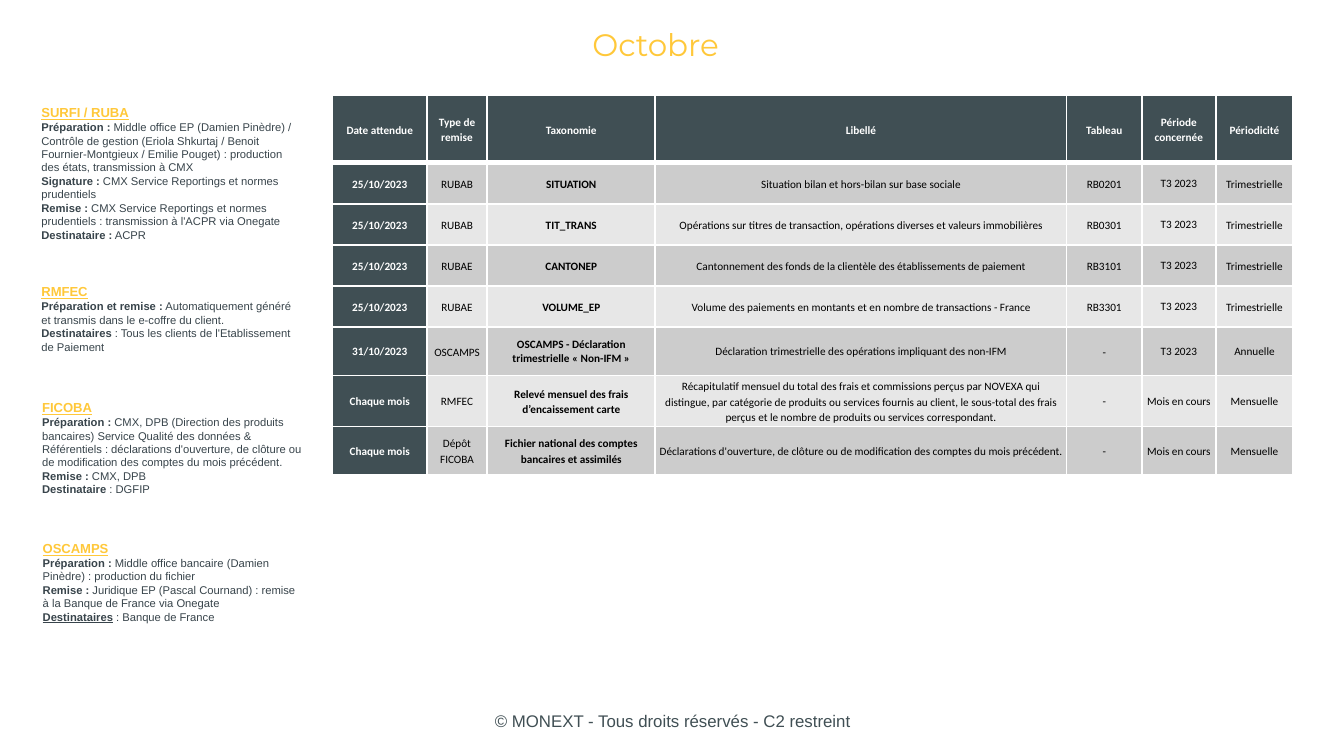
from lxml.etree import SubElement
from pptx import Presentation
from pptx.dml.color import RGBColor
from pptx.enum.text import MSO_ANCHOR, MSO_AUTO_SIZE, PP_ALIGN
from pptx.oxml.ns import qn
from pptx.util import Pt

YELLOW, SLATE, INK = "FFC83A", "404F54", "38444B"
WHITE, BLACK = "FFFFFF", "000000"
BANDS = ["CCCCCC", "E7E7E7"]

COLUMN_WIDTHS = [50.4, 32.4, 90, 220.4, 40.3, 39.6, 41.5]
ROW_HEIGHTS = [36] + [22] * 4 + [26] * 3
HEADER = ["Date attendue", "Type de remise", "Taxonomie", "Libellé",
          "Tableau", "Période concernée", "Périodicité"]
REPORTS = [
    ["25/10/2023", "RUBAB", "SITUATION",
     "Situation bilan et hors-bilan sur base sociale",
     "RB0201", "T3 2023", "Trimestrielle"],
    ["25/10/2023", "RUBAB", "TIT_TRANS",
     "Opérations sur titres de transaction, opérations diverses et valeurs immobilières",
     "RB0301", "T3 2023", "Trimestrielle"],
    ["25/10/2023", "RUBAE", "CANTONEP",
     "Cantonnement des fonds de la clientèle des établissements de paiement",
     "RB3101", "T3 2023", "Trimestrielle"],
    ["25/10/2023", "RUBAE", "VOLUME_EP",
     "Volume des paiements en montants et en nombre de transactions - France",
     "RB3301", "T3 2023", "Trimestrielle"],
    ["31/10/2023", "OSCAMPS", "OSCAMPS - Déclaration trimestrielle « Non-IFM »",
     "Déclaration trimestrielle des opérations impliquant des non-IFM",
     "-", "T3 2023", "Annuelle"],
    ["Chaque mois", "RMFEC", "Relevé mensuel des frais d’encaissement carte",
     "Récapitulatif mensuel du total des frais et commissions perçus par NOVEXA qui "
     "distingue, par catégorie de produits ou services fournis au client, le sous-total "
     "des frais perçus et le nombre de produits ou services correspondant.",
     "-", "Mois en cours", "Mensuelle"],
    ["Chaque mois", "Dépôt FICOBA", "Fichier national des comptes bancaires et assimilés",
     "Déclarations d'ouverture, de clôture ou de modification des comptes du mois précédent.",
     "-", "Mois en cours", "Mensuelle"],
]

PROCEDURES = [
    (15.1, 52.6, 80, "SURFI / RUBA", [
        ("Préparation :", " Middle office EP (Damien Pinèdre) / Contrôle de gestion "
         "(Eriola Shkurtaj / Benoit Fournier-Montgieux / Emilie Pouget) : production "
         "des états, transmission à CMX"),
        ("Signature :", " CMX Service Reportings et normes prudentiels"),
        ("Remise :", " CMX Service Reportings et normes prudentiels : "
         "transmission à l'ACPR via Onegate"),
        ("Destinataire :", " ACPR")]),
    (15.1, 148.5, 46, "RMFEC", [
        ("Préparation et remise :",
         " Automatiquement généré et transmis dans le e-coffre du client."),
        ("Destinataires", " : Tous les clients de l'Etablissement de Paiement")]),
    (15.5, 210.6, 60, "FICOBA", [
        ("Préparation :", " CMX, DPB (Direction des produits bancaires) Service Qualité "
         "des données & Référentiels : déclarations d'ouverture, de clôture ou de "
         "modification des comptes du mois précédent."),
        ("Remise :", " CMX, DPB"),
        ("Destinataire", " : DGFIP")]),
    (15.8, 286.1, 53, "OSCAMPS", [
        ("Préparation :", " Middle office bancaire (Damien Pinèdre) : production du fichier"),
        ("Remise :", " Juridique EP (Pascal Cournand) : remise à la Banque de France via Onegate"),
        ("Destinataires", " : Banque de France")]),
]


def color(hex_code):
    return RGBColor.from_string(hex_code)


def add_run(paragraph, text, size, font, hex_code, bold=False, underline=False):
    run = paragraph.add_run()
    run.text = text
    run.font.size = Pt(size)
    run.font.name = font
    run.font.bold = bold
    run.font.underline = underline
    run.font.color.rgb = color(hex_code)


def add_frame(slide, left, top, width, height):
    frame = slide.shapes.add_textbox(Pt(left), Pt(top), Pt(width), Pt(height)).text_frame
    frame.word_wrap = True
    return frame


def add_title(slide, text):
    title = slide.shapes.title
    title.left, title.top, title.width, title.height = Pt(151.2), Pt(10.8), Pt(400), Pt(26)
    frame = title.text_frame
    frame.auto_size = MSO_AUTO_SIZE.NONE
    frame.vertical_anchor = MSO_ANCHOR.MIDDLE
    heading = frame.paragraphs[0]
    heading.alignment = PP_ALIGN.CENTER
    add_run(heading, text, 16.6, "Montserrat", YELLOW)


def add_footer(slide, text):
    frame = add_frame(slide, 246.2, 375.1, 228.2, 21.6)
    frame.vertical_anchor = MSO_ANCHOR.MIDDLE
    notice = frame.paragraphs[0]
    notice.alignment = PP_ALIGN.CENTER
    add_run(notice, text, 9, "Arial", SLATE)


def add_procedure(slide, left, top, height, heading, steps):
    frame = add_frame(slide, left, top, 154, height)
    add_run(frame.paragraphs[0], heading, 7, "Arial", YELLOW, True, True)
    for label, detail in steps:
        step = frame.add_paragraph()
        underlined = (heading, label) == ("OSCAMPS", "Destinataires")
        add_run(step, label, 6, "Arial", INK, True, underlined)
        add_run(step, detail, 6, "Arial", INK)


def add_borders(cell, top, bottom):
    properties = cell._tc.get_or_add_tcPr()
    for side, width in (("L", 1), ("R", 1), ("T", top), ("B", bottom)):
        border = SubElement(properties, qn(f"a:ln{side}"), w=str(Pt(width)))
        fill = SubElement(border, qn("a:solidFill"))
        SubElement(fill, qn("a:srgbClr"), val=WHITE)


def fill_cell(cell, text, row, column):
    dark = row == 0 or column == 0
    roomy = row == 5 and column in (0, 2, 5, 6)
    single = roomy or text == "T3 2023" or (row == 5 and column == 3)
    add_borders(cell, 3 if row == 1 else 1, 3 if row == 0 else 1)
    cell.fill.solid()
    cell.fill.fore_color.rgb = color(SLATE if dark else BANDS[(row - 1) % 2])
    cell.vertical_anchor = MSO_ANCHOR.MIDDLE
    cell.margin_left = cell.margin_right = Pt(7.2 if roomy else 2)
    cell.margin_top = cell.margin_bottom = Pt(3.6 if roomy else 1.2)
    entry = cell.text_frame.paragraphs[0]
    entry.alignment = PP_ALIGN.CENTER
    entry.line_spacing = 1.0 if single else 1.15
    add_run(entry, text, 6, "Calibri", WHITE if dark else BLACK, dark or column == 2)


def add_calendar(slide):
    rows = [HEADER] + REPORTS
    calendar = slide.shapes.add_table(
        len(rows), len(HEADER), Pt(178.2), Pt(51.2),
        Pt(sum(COLUMN_WIDTHS)), Pt(sum(ROW_HEIGHTS))).table
    for column, width in enumerate(COLUMN_WIDTHS):
        calendar.columns[column].width = Pt(width)
    for row, texts in enumerate(rows):
        calendar.rows[row].height = Pt(ROW_HEIGHTS[row])
        for column, text in enumerate(texts):
            fill_cell(calendar.cell(row, column), text, row, column)


def main():
    deck = Presentation()
    deck.slide_width, deck.slide_height = Pt(720), Pt(405)
    slide = deck.slides.add_slide(deck.slide_layouts[5])
    add_title(slide, "Octobre")
    add_footer(slide, "© MONEXT - Tous droits réservés - C2 restreint")
    add_calendar(slide)
    for procedure in PROCEDURES:
        add_procedure(slide, *procedure)
    deck.save("out.pptx")


if __name__ == "__main__":
    main()
